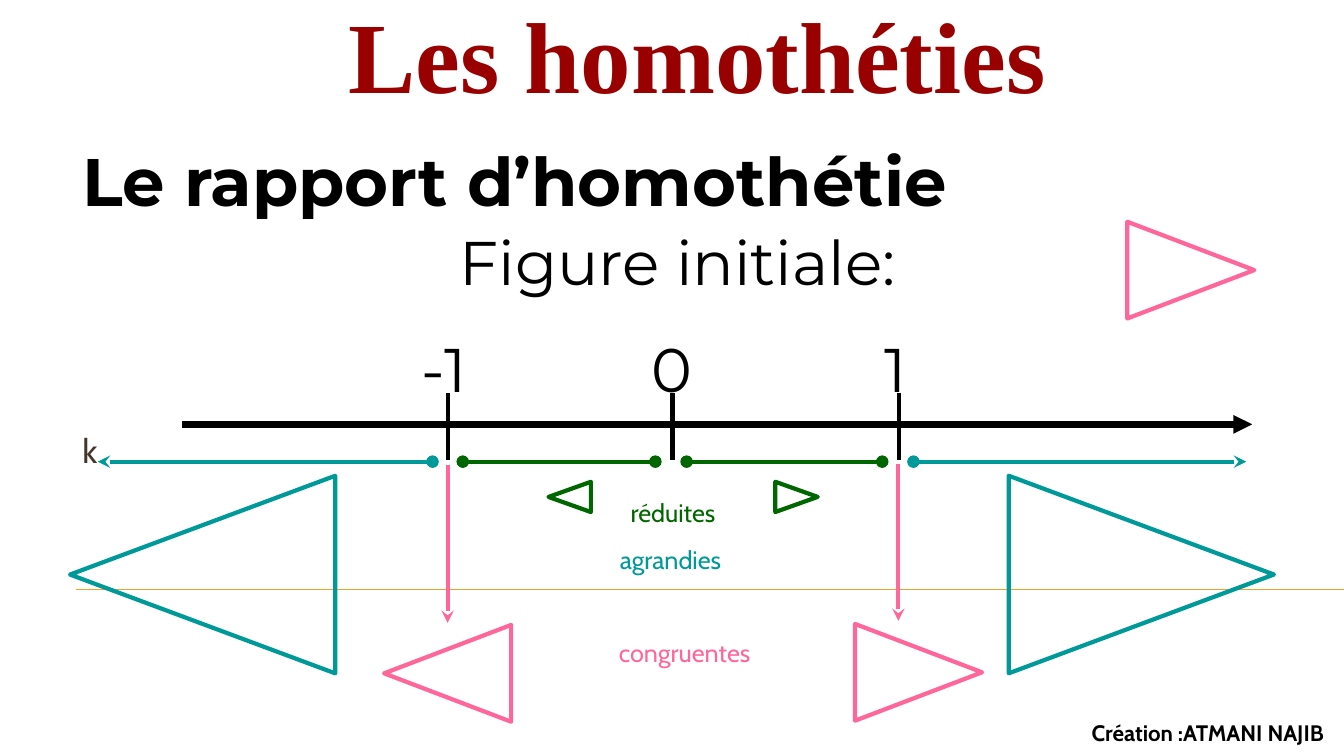
"""Build the slide on the ratio of a homothety, with its number line and triangles."""
from dataclasses import dataclass

import lxml.etree
import pptx
import pptx.dml.color
import pptx.enum.shapes
import pptx.enum.text
import pptx.oxml.ns
import pptx.shapes.base
import pptx.slide
import pptx.util

Inches = pptx.util.Inches
Align = pptx.enum.text.PP_ALIGN
Anchor = pptx.enum.text.MSO_ANCHOR
TOP, LOW = Anchor.TOP, Anchor.BOTTOM

COLORS = {
    "black": "000000", "brown": "45342A", "red": "990000", "gold": "F0A22E",
    "pink": "FF6699", "green": "006600", "teal": "009999",
}
SIZES = {"pink": (0.96, 1.26), "green": (0.3, 0.42), "teal": (1.96, 2.63)}
TURNS = {"left": 270, "right": 90}


@dataclass
class Label:
    text: str
    left: float
    top: float
    width: float
    height: float
    size: int
    font: str
    color: str
    align: Align = Align.CENTER
    anchor: Anchor = TOP
    bold: bool = False


@dataclass
class Line:
    start: tuple[float, float]
    end: tuple[float, float]
    color: str
    weight: float = 3
    head: str = ""
    tail: str = ""


@dataclass
class Wedge:
    x: float
    y: float
    color: str
    side: str


TICKS = [
    Line((x, 3.9), (x, 4.56), "black") for x in (4.44, 6.67, 8.92)
]
LINES = [
    Line((0.75, 5.85), (13.33, 5.85), "gold", 0.75),
    Line((1.81, 4.21), (12.42, 4.21), "black", 4.5, tail="triangle"),
    *TICKS,
    Line((4.59, 4.58), (6.5, 4.58), "green", head="oval", tail="oval"),
    Line((6.81, 4.58), (8.75, 4.58), "green", head="oval", tail="oval"),
    Line((9.06, 4.58), (12.36, 4.58), "teal", head="oval", tail="stealth"),
    Line((4.29, 4.58), (0.97, 4.58), "teal", head="oval", tail="stealth"),
    Line((4.44, 4.61), (4.44, 6.18), "pink", tail="stealth"),
    Line((8.91, 4.6), (8.91, 6.16), "pink", tail="stealth"),
]
WEDGES = [
    Wedge(4.44, 6.68, "pink", "left"),
    Wedge(9.11, 6.67, "pink", "right"),
    Wedge(11.81, 2.68, "pink", "right"),
    Wedge(5.65, 4.93, "green", "left"),
    Wedge(7.9, 4.93, "green", "right"),
    Wedge(2.01, 5.7, "teal", "left"),
    Wedge(11.32, 5.7, "teal", "right"),
]
LABELS = [
    Label("k", 0.72, 3.71, 0.83, 1, 24, "Cabin", "brown", Align.LEFT, LOW),
    Label("Le rapport d’homothétie", 0.72, 1.6, 12.18, 0.63, 48, "Montserrat",
          "black", Align.LEFT, LOW, True),
    Label("Les homothéties", 0.75, 0.26, 12.33, 0.92, 72, "Times New Roman",
          "red", anchor=LOW, bold=True),
    Label("0", 6.22, 3.23, 0.89, 0.79, 44, "Montserrat", "black"),
    Label("1", 8.44, 3.23, 0.89, 0.79, 44, "Montserrat", "black"),
    Label("-1", 3.81, 3.23, 1.19, 0.79, 44, "Montserrat", "black"),
    Label("Figure initiale:", 4.46, 2.17, 7.43, 1, 44, "Montserrat", "black",
          Align.LEFT),
    Label("congruentes", 3.79, 6.27, 6, 0.4, 18, "Cabin", "pink"),
    Label("réduites", 4.42, 4.88, 4.51, 0.4, 18, "Cabin", "green"),
    Label("agrandies", 3.29, 5.35, 6.72, 0.4, 18, "Cabin", "teal"),
    Label("Création :ATMANI NAJIB", 10.31, 7.09, 2.92, 0.37, 16, "Cabin",
          "black", Align.RIGHT, bold=True),
]


def get_rgb(name: str) -> pptx.dml.color.RGBColor:
    return pptx.dml.color.RGBColor.from_string(COLORS[name])


def draw_line(slide: pptx.slide.Slide, line: Line) -> None:
    ends = [Inches(v) for v in (*line.start, *line.end)]
    shape = slide.shapes.add_connector(
        pptx.enum.shapes.MSO_CONNECTOR.STRAIGHT, *ends)
    shape.line.color.rgb = get_rgb(line.color)
    shape.line.width = pptx.util.Pt(line.weight)
    stroke = shape.line._get_or_add_ln()
    for tag, kind in (("a:headEnd", line.head), ("a:tailEnd", line.tail)):
        if kind:
            tip = lxml.etree.SubElement(stroke, pptx.oxml.ns.qn(tag))
            tip.set("type", kind)
    lxml.etree.SubElement(shape._element.spPr, pptx.oxml.ns.qn("a:effectLst"))


def draw_wedge(slide: pptx.slide.Slide, wedge: Wedge) -> None:
    width, height = SIZES[wedge.color]
    shape = slide.shapes.add_shape(
        pptx.enum.shapes.MSO_SHAPE.ISOSCELES_TRIANGLE,
        Inches(wedge.x - width / 2), Inches(wedge.y - height / 2),
        Inches(width), Inches(height))
    shape.rotation = TURNS[wedge.side]
    shape.shadow.inherit = False
    shape.fill.background()
    shape.line.color.rgb = get_rgb(wedge.color)
    shape.line.width = pptx.util.Pt(3)


def draw_label(slide: pptx.slide.Slide, label: Label) -> None:
    box = slide.shapes.add_textbox(
        Inches(label.left), Inches(label.top),
        Inches(label.width), Inches(label.height))
    frame = box.text_frame
    frame.word_wrap = True
    frame.vertical_anchor = label.anchor
    para = frame.paragraphs[0]
    para.alignment = label.align
    run = para.add_run()
    run.text = label.text
    run.font.name = label.font
    run.font.size = pptx.util.Pt(label.size)
    run.font.bold = label.bold
    run.font.color.rgb = get_rgb(label.color)


def main() -> None:
    deck = pptx.Presentation()
    deck.slide_width, deck.slide_height = Inches(13.33), Inches(7.5)
    slide = deck.slides.add_slide(deck.slide_layouts[6])
    for line in LINES:
        draw_line(slide, line)
    for wedge in WEDGES:
        draw_wedge(slide, wedge)
    for label in LABELS:
        draw_label(slide, label)
    deck.save("out.pptx")


if __name__ == "__main__":
    main()
